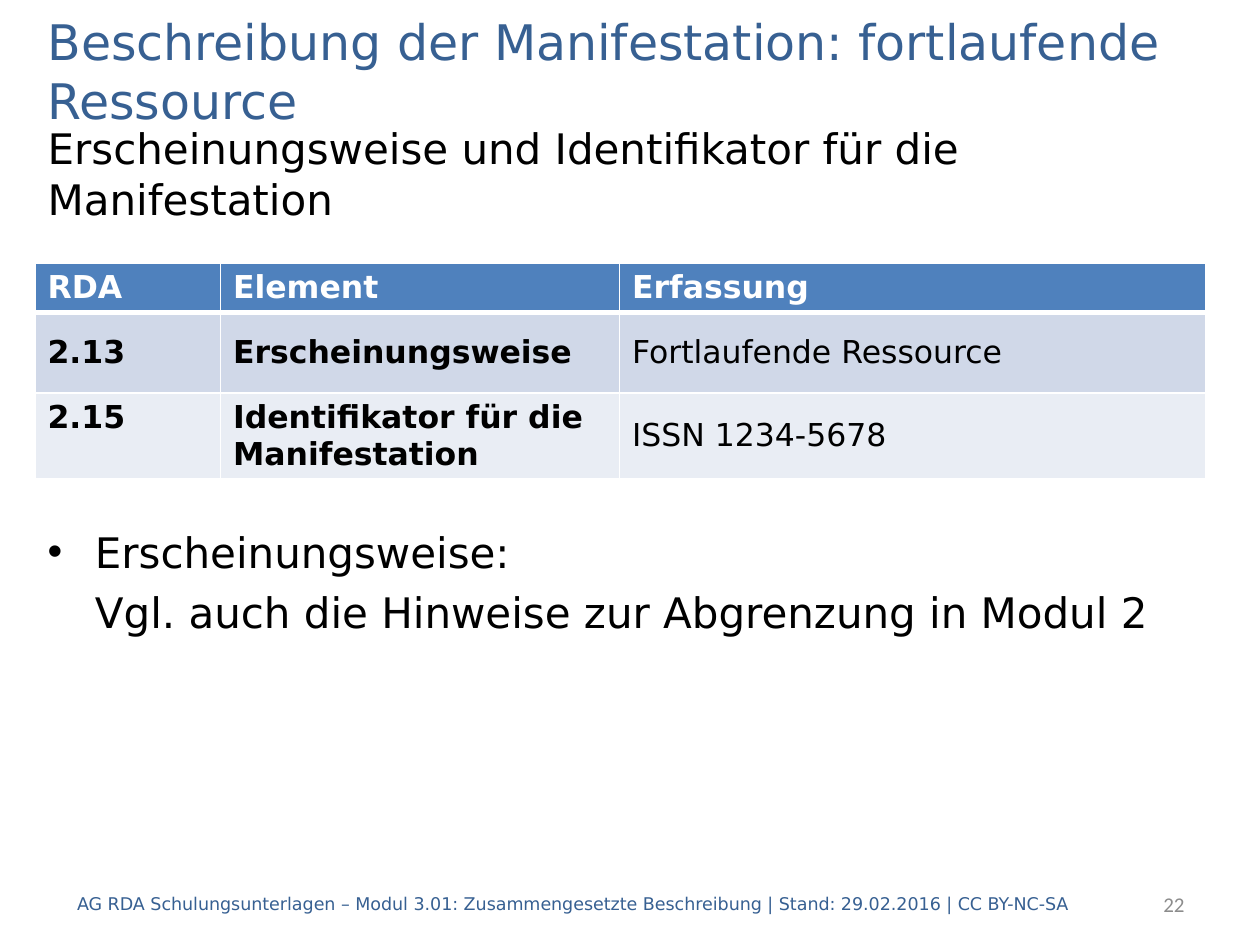
from typing import NamedTuple

from lxml import etree
from pptx import Presentation
from pptx.dml.color import RGBColor
from pptx.enum import text
from pptx.oxml import ns
from pptx.util import Pt

COLORS = {
    "heading": "376092",
    "ink": "000000",
    "number": "8C8C8C",
    "white": "FFFFFF",
    "header": "4F81BD",
    "band_dark": "D0D8E8",
    "band_light": "E9EDF4",
}
FONT = "DejaVu Sans"
TOP, MIDDLE = text.MSO_ANCHOR.TOP, text.MSO_ANCHOR.MIDDLE
LEFT, RIGHT = text.PP_ALIGN.LEFT, text.PP_ALIGN.RIGHT


class Box(NamedTuple):
    left: float
    top: float
    width: float
    height: float


class Row(NamedTuple):
    height: float
    fill: str
    cells: tuple[str, ...]
    anchors: tuple = (MIDDLE, MIDDLE, MIDDLE)
    ink: str = "ink"
    bold: tuple[bool, ...] = (True, True, False)
    bottom_line: float = 1


COLUMN_WIDTHS = (106, 228, 335)
ROWS = (
    Row(28, "header", ("RDA", "Element", "Erfassung"), (TOP, TOP, TOP),
        "white", (True, True, True), 3),
    Row(46, "band_dark", ("2.13", "Erscheinungsweise", "Fortlaufende Ressource")),
    Row(46, "band_light",
        ("2.15", "Identifikator für die Manifestation", "ISSN 1234-5678"),
        (TOP, MIDDLE, MIDDLE)),
)


def rgb(name: str) -> RGBColor:
    return RGBColor.from_string(COLORS[name])


def place(shape, box: Box) -> None:
    shape.left, shape.top, shape.width, shape.height = map(Pt, box)


def write(paragraph, wording: str, *, size: float, color: str = "ink", font: str = FONT,
          bold: bool = False, align=LEFT, before: float = 0) -> None:
    paragraph.alignment = align
    paragraph.space_before = Pt(before)
    run = paragraph.add_run()
    run.text = wording
    run.font.name, run.font.size, run.font.bold = font, Pt(size), bold
    run.font.color.rgb = rgb(color)


def indent(paragraph, left: float, hanging: float = 0, bullet: bool = False) -> None:
    properties = paragraph._p.get_or_add_pPr()
    properties.set("marL", str(Pt(left)))
    properties.set("indent", str(-Pt(hanging)))
    if not bullet:
        etree.SubElement(properties, ns.qn("a:buNone"))


def add_borders(cell, bottom: float) -> None:
    properties = cell._tc.get_or_add_tcPr()
    for side, width in (("L", 1), ("R", 1), ("T", 1), ("B", bottom)):
        line = etree.SubElement(properties, ns.qn(f"a:ln{side}"), w=str(Pt(width)))
        solid = etree.SubElement(line, ns.qn("a:solidFill"))
        etree.SubElement(solid, ns.qn("a:srgbClr"), val=COLORS["white"])


def add_elements_table(slide, box: Box) -> None:
    frame = slide.shapes.add_table(len(ROWS), len(COLUMN_WIDTHS), *map(Pt, box))
    table = frame.table
    for column, width in zip(table.columns, COLUMN_WIDTHS):
        column.width = Pt(width)
    for table_row, row in zip(table.rows, ROWS):
        table_row.height = Pt(row.height)
        for cell, wording, anchor, bold in zip(table_row.cells, row.cells, row.anchors, row.bold):
            add_borders(cell, row.bottom_line)
            cell.fill.solid()
            cell.fill.fore_color.rgb = rgb(row.fill)
            cell.vertical_anchor = anchor
            write(cell.text_frame.paragraphs[0], wording, size=18, color=row.ink, bold=bold)


def add_footer_text(slide, box: Box, wording: str, **style) -> None:
    frame = slide.shapes.add_textbox(*map(Pt, box)).text_frame
    frame.word_wrap = True
    frame.vertical_anchor = MIDDLE
    write(frame.paragraphs[0], wording, **style)


def fill_title(title) -> None:
    place(title, Box(20, 14.5, 680, 51))
    frame = title.text_frame
    frame.auto_size = text.MSO_AUTO_SIZE.NONE
    frame.vertical_anchor = MIDDLE
    write(frame.paragraphs[0], "Beschreibung der Manifestation: fortlaufende Ressource",
          size=28, color="heading")


def fill_body(body) -> None:
    place(body, Box(20, 66.5, 680, 430))
    frame = body.text_frame
    frame.auto_size = text.MSO_AUTO_SIZE.NONE
    subtitle, topic, hint = frame.paragraphs[0], frame.add_paragraph(), frame.add_paragraph()
    write(subtitle, "Erscheinungsweise und Identifikator für die Manifestation", size=24)
    indent(subtitle, 0)
    # The wide gap leaves room for the table.
    write(topic, "Erscheinungsweise:", size=24, before=173)
    indent(topic, 27, hanging=27, bullet=True)
    write(hint, "Vgl. auch die Hinweise zur Abgrenzung in Modul 2", size=24, before=5.5)
    indent(hint, 27)


def main() -> None:
    deck = Presentation()
    deck.slide_width, deck.slide_height = Pt(720), Pt(540)
    slide = deck.slides.add_slide(deck.slide_layouts[1])
    fill_title(slide.shapes.title)
    fill_body(slide.placeholders[1])
    add_elements_table(slide, Box(20, 150.5, sum(COLUMN_WIDTHS), sum(r.height for r in ROWS)))
    add_footer_text(slide, Box(569.5, 502, 114.5, 29), "22", size=12, color="number",
                    font="Calibri", align=RIGHT)
    add_footer_text(
        slide, Box(37, 502, 629, 29),
        "AG RDA Schulungsunterlagen – Modul 3.01: Zusammengesetzte Beschreibung"
        " | Stand: 29.02.2016 | CC BY-NC-SA",
        size=10, color="heading")
    deck.save("out.pptx")


if __name__ == "__main__":
    main()
